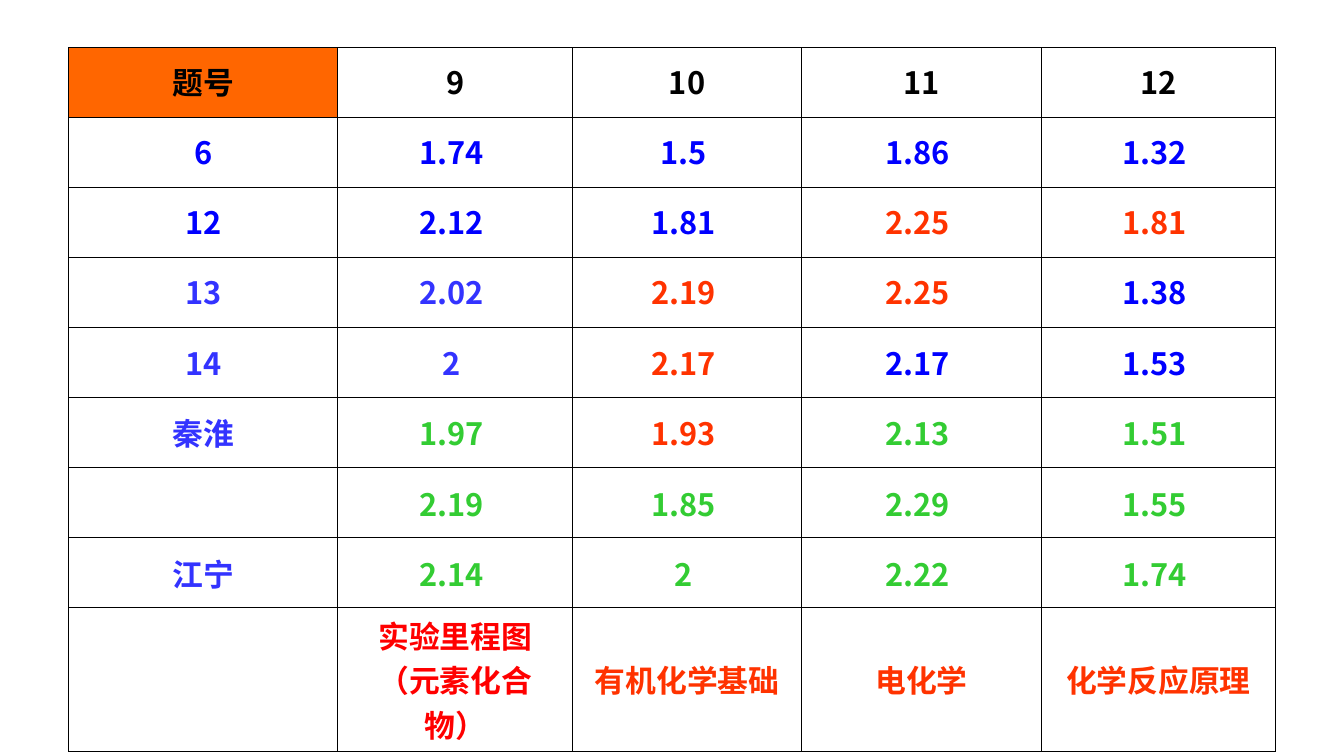
"""Build a slide with a table of scores by question number."""
from dataclasses import dataclass

from lxml import etree
from pptx import Presentation
from pptx import util as u
from pptx.dml.color import RGBColor
from pptx.enum import text
from pptx.oxml import ns

COLORS = {
    "black": "000000",
    "blue": "0000FF",
    "violet": "3333FF",
    "orange": "FF3300",
    "green": "33CC33",
    "red": "FF0000",
    "header": "FF6600",
}
CJK_FONT = "Noto Sans CJK SC"
COLUMN_WIDTHS = (2.67, 2.33, 2.27, 2.38, 2.32)
ROW_HEIGHT = 0.695
TIGHT_ROWS = 4


@dataclass(frozen=True)
class ScoreRow:
    """Label and entries of one row, with a colour for each cell."""

    entries: tuple[str, ...]
    colors: tuple[str, ...]


ROWS = (
    ScoreRow(("题号", "9", "10", "11", "12"), ("black",) * 5),
    ScoreRow(("6", "1.74 ", "1.5 ", "1.86 ", "1.32 "), ("blue",) * 5),
    ScoreRow(("12", "2.12 ", "1.81 ", "2.25 ", "1.81 "),
             ("blue", "blue", "blue", "orange", "orange")),
    ScoreRow(("13", "2.02 ", "2.19 ", "2.25 ", "1.38 "),
             ("violet", "violet", "orange", "orange", "blue")),
    ScoreRow(("14", "2 ", "2.17 ", "2.17 ", "1.53 "),
             ("violet", "violet", "orange", "blue", "blue")),
    ScoreRow(("秦淮", "1.97 ", "1.93 ", "2.13 ", "1.51 "),
             ("violet", "green", "orange", "green", "green")),
    ScoreRow(("", "2.19 ", "1.85 ", "2.29 ", "1.55 "),
             ("violet",) + ("green",) * 4),
    ScoreRow(("江宁", "2.14 ", "2 ", "2.22 ", "1.74 "),
             ("violet",) + ("green",) * 4),
    ScoreRow(("", "实验里程图（元素化合物）", "有机化学基础", "电化学", "化学反应原理"),
             ("violet", "red", "orange", "orange", "orange")),
)


def add_borders(cell) -> None:
    """Draw a thin black line on every side of a cell."""
    properties = cell._tc.get_or_add_tcPr()
    for side in ("a:lnL", "a:lnR", "a:lnT", "a:lnB"):
        line = etree.SubElement(properties, ns.qn(side), w=str(u.Pt(0.5)))
        fill = etree.SubElement(line, ns.qn("a:solidFill"))
        etree.SubElement(fill, ns.qn("a:srgbClr"), val=COLORS["black"])


def write_entry(cell, entry: str, color: str, latin: str, tight: bool) -> None:
    """Put a centred, bold entry into a cell."""
    cell.vertical_anchor = text.MSO_ANCHOR.MIDDLE
    paragraph = cell.text_frame.paragraphs[0]
    paragraph.text = entry
    paragraph.alignment = text.PP_ALIGN.CENTER
    if tight:
        paragraph.line_spacing = 0.9
        paragraph.space_before = u.Pt(10)
    for run in paragraph.runs:
        run.font.size = u.Pt(22)
        run.font.bold = True
        run.font.color.rgb = RGBColor.from_string(COLORS[color])
        run.font.name = latin
        etree.SubElement(run.font._element, ns.qn("a:ea"), typeface=CJK_FONT)


def add_scores(slide) -> None:
    """Add the score table to the slide."""
    scores = slide.shapes.add_table(
        len(ROWS), len(COLUMN_WIDTHS), u.Inches(0.68), u.Inches(0.47),
        u.Inches(sum(COLUMN_WIDTHS)), u.Inches(ROW_HEIGHT * len(ROWS))).table
    scores.first_row = False
    scores.horz_banding = False
    for column, width in zip(scores.columns, COLUMN_WIDTHS):
        column.width = u.Inches(width)
    for r, row in enumerate(ROWS):
        scores.rows[r].height = u.Inches(ROW_HEIGHT)
        for c, (entry, color) in enumerate(zip(row.entries, row.colors)):
            cell = scores.cell(r, c)
            is_corner = r == c == 0
            add_borders(cell)
            if is_corner:
                cell.fill.solid()
                cell.fill.fore_color.rgb = RGBColor.from_string(COLORS["header"])
            else:
                cell.fill.background()
            latin = "Calibri" if is_corner else CJK_FONT
            write_entry(cell, entry, color, latin, r < TIGHT_ROWS)


def main() -> None:
    """Create and save the presentation."""
    deck = Presentation()
    deck.slide_width = u.Inches(13.33)
    deck.slide_height = u.Inches(7.5)
    add_scores(deck.slides.add_slide(deck.slide_layouts[6]))
    deck.save("out.pptx")


if __name__ == "__main__":
    main()
